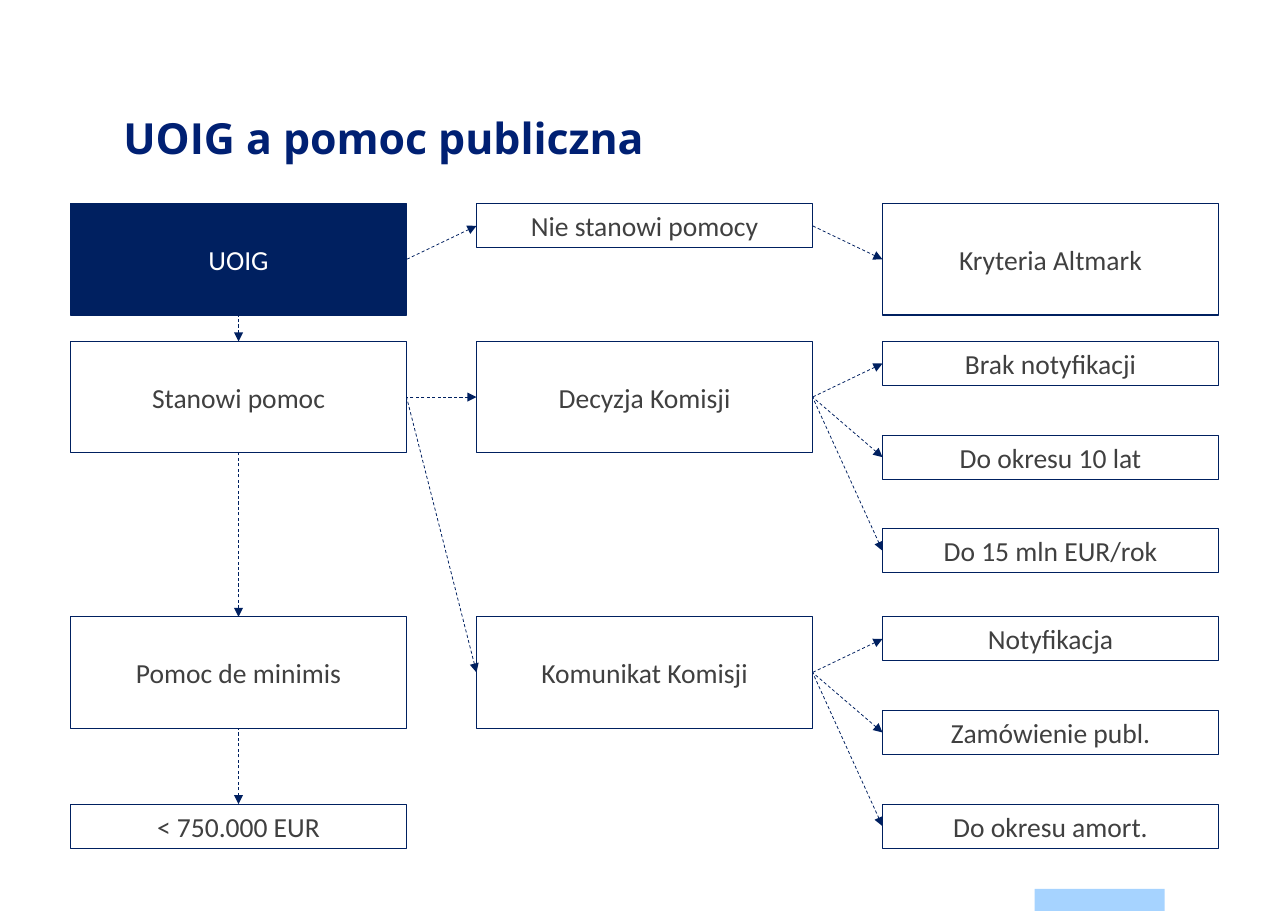
from dataclasses import dataclass

from lxml.etree import SubElement
from pptx import Presentation
from pptx.dml.color import RGBColor
from pptx.enum.dml import MSO_LINE
from pptx.enum.shapes import MSO_CONNECTOR, MSO_SHAPE
from pptx.enum.text import MSO_ANCHOR, MSO_AUTO_SIZE, PP_ALIGN
from pptx.oxml.ns import qn
from pptx.util import Inches, Pt

TOP, LEFT, BOTTOM, RIGHT = range(4)


@dataclass(frozen=True)
class Theme:
    """Colours, fonts and type sizes of the slide."""
    navy: RGBColor = RGBColor(0x00, 0x20, 0x60)
    title: RGBColor = RGBColor(0x00, 0x20, 0x73)
    text: RGBColor = RGBColor(0x40, 0x40, 0x40)
    white: RGBColor = RGBColor(0xFF, 0xFF, 0xFF)
    accent: RGBColor = RGBColor(0xA6, 0xD3, 0xFF)
    title_font: str = "Open Sans"
    label_font: str = "Calibri"
    title_size: Pt = Pt(28)
    title_leading: Pt = Pt(36)
    label_size: Pt = Pt(18)
    border: Pt = Pt(0.75)
    arrow: Pt = Pt(0.5)


@dataclass(frozen=True)
class Box:
    """A rectangle measured in inches."""
    left: float
    top: float
    width: float
    height: float

    def place(self):
        """Return the rectangle as four lengths."""
        return [Inches(side) for side in (self.left, self.top, self.width, self.height)]

    def inner(self, left, top, width, height):
        """Return a rectangle placed relative to this one."""
        return Box(self.left + left, self.top + top, width, height)


THEME = Theme()
COLUMN_STEP, NODE_WIDTH = 3.685, 3.05
TALL, SHORT = 1.01, 0.4
DECISION_ROW, NOTICE_ROW, DETAIL_STEP = 1.25, 3.75, 0.85
LAST_ROW = NOTICE_ROW + 2 * DETAIL_STEP


def add_title(page, box, text):
    """Move and format the title placeholder."""
    title = page.shapes.title
    title.left, title.top, title.width, title.height = box.place()
    frame = title.text_frame
    frame.text = text
    frame.word_wrap = True
    frame.auto_size = MSO_AUTO_SIZE.NONE
    frame.vertical_anchor = MSO_ANCHOR.TOP
    frame.margin_left = frame.margin_top = frame.margin_right = frame.margin_bottom = 0
    para = frame.paragraphs[0]
    para.alignment = PP_ALIGN.LEFT
    para.line_spacing = THEME.title_leading
    para.font.name, para.font.size = THEME.title_font, THEME.title_size
    para.font.bold = True
    para.font.color.rgb = THEME.title


def add_footer_bar(page, box):
    """Draw the pale bar at the foot of the page."""
    bar = page.shapes.add_shape(MSO_SHAPE.RECTANGLE, *box.place())
    bar.shadow.inherit = False
    bar.fill.solid()
    bar.fill.fore_color.rgb = THEME.accent
    bar.line.fill.background()


def add_node(page, box, text, filled=False):
    """Draw one labelled rectangle of the diagram."""
    node = page.shapes.add_shape(MSO_SHAPE.RECTANGLE, *box.place())
    node.shadow.inherit = False
    if filled:
        node.fill.solid()
        node.fill.fore_color.rgb = THEME.navy
    else:
        node.fill.background()
    node.line.color.rgb, node.line.width = THEME.navy, THEME.border
    frame = node.text_frame
    frame.word_wrap = True
    frame.vertical_anchor = MSO_ANCHOR.MIDDLE
    para = frame.paragraphs[0]
    para.text = text
    para.alignment = PP_ALIGN.CENTER
    para.font.name, para.font.size = THEME.label_font, THEME.label_size
    para.font.color.rgb = THEME.white if filled else THEME.text
    return node


def add_arrow(page, parent, child, down=False):
    """Join two nodes with a dashed arrow that points at the child."""
    arrow = page.shapes.add_connector(MSO_CONNECTOR.STRAIGHT, 0, 0, 0, 0)
    arrow.begin_connect(child, TOP if down else LEFT)
    arrow.end_connect(parent, BOTTOM if down else RIGHT)
    arrow.line.color.rgb, arrow.line.width = THEME.navy, THEME.arrow
    arrow.line.dash_style = MSO_LINE.DASH
    outline = arrow._element.spPr.find(qn("a:ln"))
    SubElement(outline, qn("a:headEnd"), type="triangle")
    SubElement(arrow._element.spPr, qn("a:effectLst"))


def add_column(page, box, entries):
    """Draw a column of nodes, each given as text, top and height."""
    return [
        add_node(page, box.inner(0, top, box.width, height), text, filled=text == "UOIG")
        for text, top, height in entries
    ]


def add_diagram(page, box):
    """Draw the three columns of the aid scheme and their arrows."""
    columns = [box.inner(index * COLUMN_STEP, 0, NODE_WIDTH, box.height) for index in range(3)]
    service, aid, minimis, limit = add_column(page, columns[0], [
        ("UOIG", 0, TALL),
        ("Stanowi pomoc", DECISION_ROW, TALL),
        ("Pomoc de minimis", NOTICE_ROW, TALL),
        ("< 750.000 EUR", LAST_ROW, SHORT),
    ])
    no_aid, decision, notice = add_column(page, columns[1], [
        ("Nie stanowi pomocy", 0, SHORT),
        ("Decyzja Komisji", DECISION_ROW, TALL),
        ("Komunikat Komisji", NOTICE_ROW, TALL),
    ])
    [criteria] = add_column(page, columns[2], [("Kryteria Altmark", 0, TALL)])
    details = [
        (decision, DECISION_ROW, ["Brak notyfikacji", "Do okresu 10 lat", "Do 15 mln EUR/rok"]),
        (notice, NOTICE_ROW, ["Notyfikacja", "Zamówienie publ.", "Do okresu amort."]),
    ]
    across = [(service, no_aid), (no_aid, criteria), (aid, decision), (aid, notice)]
    for parent, row, labels in details:
        entries = [(text, row + step * DETAIL_STEP, SHORT) for step, text in enumerate(labels)]
        across += [(parent, child) for child in add_column(page, columns[2], entries)]
    for parent, child in across:
        add_arrow(page, parent, child)
    for parent, child in [(service, aid), (aid, minimis), (minimis, limit)]:
        add_arrow(page, parent, child, down=True)


def main():
    """Build the slide and save the deck."""
    deck = Presentation()
    deck.slide_width, deck.slide_height = Inches(11.69), Inches(8.27)
    page = deck.slides.add_slide(deck.slide_layouts.get_by_name("Title Only"))
    add_footer_bar(page, Box(9.39, 8.07, 1.18, 0.2))
    add_title(page, Box(1.12, 0.98, 9.45, 1.18), "UOIG a pomoc publiczna")
    add_diagram(page, Box(0.64, 1.85, 10.42, 5.85))
    deck.save("out.pptx")


if __name__ == "__main__":
    main()
